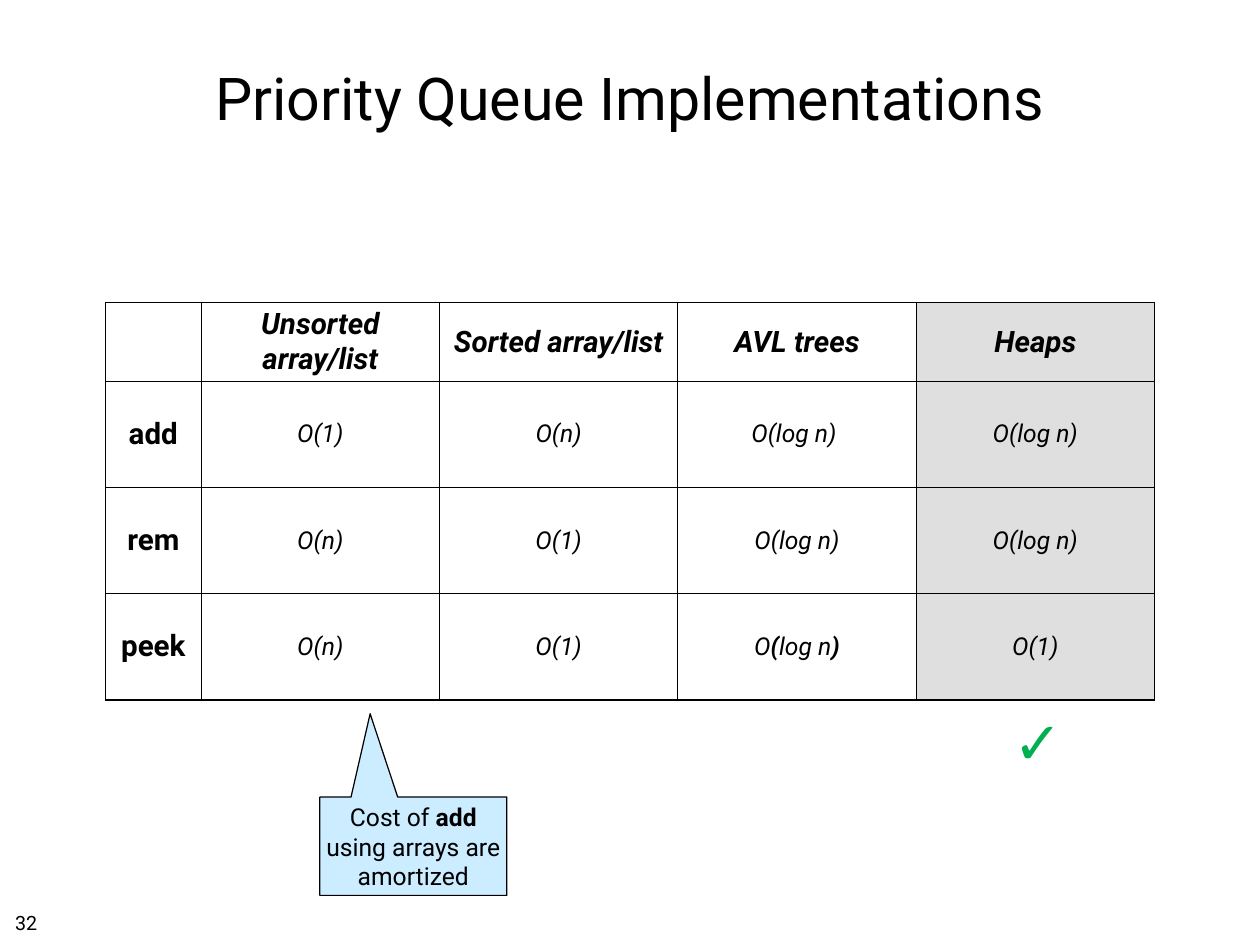
from lxml import etree
from pptx import Presentation
from pptx import util as u
from pptx.dml.color import RGBColor
from pptx.enum import shapes, text
from pptx.oxml.ns import qn

COLORS = {"ink": "000000", "paper": "FFFFFF", "highlight": "DFDFDF",
          "callout": "CCECFF", "check": "00B050"}
HEADERS = ["", "Unsorted array/list", "Sorted array/list", "AVL trees", "Heaps"]
COSTS = [
    ["add", "O(1)", "O(n)", "O(log n) ", "O(log n)"],
    ["rem", "O(n)", "O(1)", "O(log n)", "O(log n)"],
    ["peek", "O(n)", "O(1)",
     [("O", {}), ("(", {"bold": True}), ("log n", {}), (")", {"bold": True})], "O(1)"],
]


def color(name):
    return RGBColor.from_string(COLORS[name])


class SlideBuilder:
    def __init__(self, page, font="Roboto"):
        self.page = page
        self.font = font

    def add_spans(self, para, spans, align="CENTER", ink="ink", **base):
        """Fill a paragraph with a string or a list of (string, format) spans."""
        para.alignment = getattr(text.PP_ALIGN, align)
        if isinstance(spans, str):
            spans = [(spans, {})]
        for words, extra in spans:
            if words == "\n":
                para.add_line_break()
                continue
            span = para.add_run()
            span.text = words
            style = {"name": self.font, "bold": False, "italic": False, **base, **extra}
            for key, value in style.items():
                setattr(span.font, key, value)
            span.font.color.rgb = color(ink)

    def set_frame(self, frame, inset, anchor="TOP", wrap=False):
        settings = {"word_wrap": wrap,
                    "vertical_anchor": getattr(text.MSO_ANCHOR, anchor)}
        for side in ("left", "right", "top", "bottom"):
            settings["margin_" + side] = u.Inches(inset)
        for key, value in settings.items():
            setattr(frame, key, value)

    def text_box(self, place, spans, inset=0.06, anchor="TOP", wrap=False, **style):
        box = self.page.shapes.add_textbox(*map(u.Inches, place))
        self.set_frame(box.text_frame, inset, anchor, wrap)
        self.add_spans(box.text_frame.paragraphs[0], spans, **style)

    def callout(self, place, tip, spans, **style):
        box = self.page.shapes.add_shape(
            shapes.MSO_SHAPE.RECTANGULAR_CALLOUT, *map(u.Inches, place))
        box.shadow.inherit = False
        box.adjustments[0], box.adjustments[1] = tip
        box.fill.solid()
        box.fill.fore_color.rgb = color("callout")
        box.line.color.rgb = color("ink")
        box.line.width = u.Pt(1)
        self.set_frame(box.text_frame, 0.05, "MIDDLE")
        self.add_spans(box.text_frame.paragraphs[0], spans, **style)

    def border(self, cell):
        properties = cell._tc.get_or_add_tcPr()
        for index, side in enumerate(("lnL", "lnR", "lnT", "lnB")):
            line = etree.Element(qn("a:" + side), w=str(u.Pt(1)))
            fill = etree.SubElement(line, qn("a:solidFill"))
            etree.SubElement(fill, qn("a:srgbClr"), val=COLORS["ink"])
            properties.insert(index, line)

    def table(self, place, rows, widths, heights):
        grid = self.page.shapes.add_table(
            len(rows), len(widths), *map(u.Inches, place)).table
        for column, width in zip(grid.columns, widths):
            column.width = u.Inches(width)
        for row, height in zip(grid.rows, heights):
            row.height = u.Inches(height)
        for r, row in enumerate(rows):
            for c, spans in enumerate(row):
                cell = grid.cell(r, c)
                cell.vertical_anchor = text.MSO_ANCHOR.MIDDLE
                cell.fill.solid()
                last = c == len(row) - 1
                cell.fill.fore_color.rgb = color("highlight" if last else "paper")
                self.border(cell)
                heading = r == 0 or c == 0
                if spans:
                    self.add_spans(cell.text_frame.paragraphs[0], spans, bold=heading,
                                   italic=c > 0, size=u.Pt(24 if heading else 20))


def main():
    deck = Presentation()
    deck.slide_width, deck.slide_height = u.Inches(14.22), u.Inches(10.67)
    builder = SlideBuilder(deck.slides.add_slide(deck.slide_layouts[6]))

    # Cost table
    builder.table((1.19, 3.42, 11.84, 4.3), [HEADERS] + COSTS,
                  [1.08] + [2.69] * 4, [0.7] + [1.2] * 3)

    # Title
    builder.text_box((1.04, 0.28, 12.14, 1.64), "Priority Queue Implementations",
                     anchor="MIDDLE", wrap=True, size=u.Pt(48))

    # Note on amortized cost
    builder.callout((3.61, 9, 2.11, 1.11), (-0.231, -1.348),
                    [("Cost of ", {}), ("add", {"bold": True}), ("\n", {}),
                     ("using arrays are", {}), ("\n", {}), ("amortized", {})],
                    size=u.Pt(20))

    # Check mark under the best choice
    builder.text_box((11.36, 7.92, 0.72, 0.91), "✓", inset=0.05,
                     ink="check", bold=True, size=u.Pt(48))

    # Page number
    builder.text_box((0.11, 10.23, 0.37, 0.35), "32", align="LEFT", size=u.Pt(16))

    deck.save("out.pptx")


if __name__ == "__main__":
    main()
